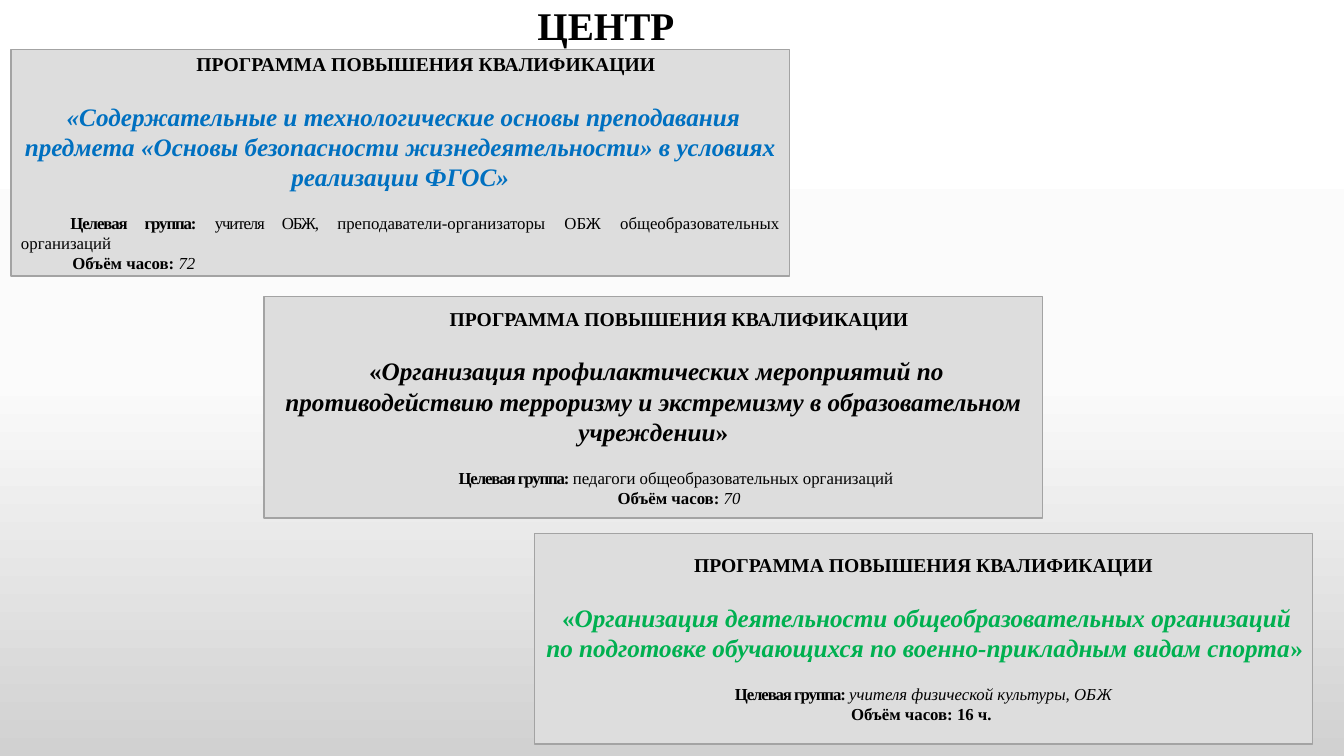
from copy import deepcopy

from pptx import Presentation
from pptx.dml.color import RGBColor
from pptx.enum.shapes import MSO_SHAPE
from pptx.enum.text import MSO_ANCHOR, PP_ALIGN
from pptx.oxml.ns import qn
from pptx.util import Inches, Pt

LEFT, MID, JUST = PP_ALIGN.LEFT, PP_ALIGN.CENTER, PP_ALIGN.JUSTIFY
BOLD = dict(bold=True)
ITALIC = dict(italic=True)
BOTH = dict(bold=True, italic=True)
PLAIN = dict(bold=False)


def color(text):
    return RGBColor.from_string(text)


def add_run(para, text, size, style, hue="000000", track=0):
    """Add a run; track is the letter spacing in points."""
    run = para.add_run()
    run.text = text
    run.font.color.rgb = color(hue)
    for name, value in dict(name="Times New Roman", size=Pt(size), **style).items():
        setattr(run.font, name, value)
    if track:
        run.font._element.set("spc", str(int(track * 100)))


prs = Presentation()
prs.slide_width, prs.slide_height = Inches(13.33), Inches(7.5)
slide = prs.slides.add_slide(prs.slide_layouts[5])

# Background
fill = slide.background.fill
fill.gradient()
fill.gradient_angle = 270
stops = slide.element.find(".//" + qn("a:gsLst"))
stops.append(deepcopy(stops[0]))
shades = [(0, "FFFFFF"), (0.5, "FBFBFB"), (1, "D1D1D1")]
for stop, (place, hue) in zip(fill.gradient_stops, shades):
    stop.position = place
    stop.color.rgb = color(hue)

# Title
title = slide.shapes.title
spot = dict(left=4.68, top=0, width=2.66, height=0.56)
for name, value in spot.items():
    setattr(title, name, Inches(value))
title.text_frame.vertical_anchor = MSO_ANCHOR.MIDDLE
para = title.text_frame.paragraphs[0]
para.alignment, para.line_spacing = MID, 0.9
add_run(para, "ЦЕНТР", 28, BOLD)

# Programme cards: place, colour, course runs, audience runs, hours runs,
# alignment of the last two lines, (margin, indent) of each line
GROUP = ("Целевая группа: ", 12, BOLD, -0.8)
HOURS = ("Объём часов:", 12, BOLD, 0)
SHIFT = [(0.02, 0.49), (0, 0), (0, 0.49), (0.02, 0.49)]
cards = [
    ((2.62, 2.94, 2.2), "000000",
     [(" «", BOLD),
      ("Организация профилактических мероприятий по противодействию терроризму "
       "и экстремизму в образовательном учреждении", BOTH),
      ("»", BOLD)],
     [GROUP, ("педагоги", 12, PLAIN, 0), (" ", 11, PLAIN, 0),
      ("общеобразовательных организаций ", 12, PLAIN, 0)],
     [HOURS, (" 70", 12, ITALIC, 0)], (MID, MID), SHIFT),
    ((5.3, 5.29, 2.09), "00B050",
     [(" «", BOLD),
      ("Организация деятельности общеобразовательных организаций по подготовке "
       "обучающихся по военно-прикладным видам спорта", BOTH),
      ("»", BOLD)],
     [GROUP, ("учителя физической культуры, ОБЖ", 12, ITALIC, 0)],
     [("Объём часов: 16 ч. ", 12, BOLD, 0)], (MID, MID), [(0.02, -0.02)] * 4),
    ((0.11, 0.49, 2.25), "0070C0",
     [(" ", BOLD),
      ("«Содержательные и технологические основы преподавания предмета «Основы "
       "безопасности жизнедеятельности» в условиях реализации ФГОС»", BOTH)],
     [GROUP, ("учителя ОБЖ, ", 12, PLAIN, -0.8),
      ("преподаватели-организаторы ОБЖ", 12, PLAIN, 0), (" ", 11, PLAIN, 0),
      ("общеобразовательных организаций ", 12, PLAIN, 0)],
     [HOURS, (" 72", 12, ITALIC, 0)], (JUST, LEFT), SHIFT),
]

for (left, top, height), hue, course, group, hours, ends, shifts in cards:
    card = slide.shapes.add_shape(MSO_SHAPE.RECTANGLE, Inches(left), Inches(top),
                                  Inches(7.72), Inches(height))
    card.shadow.inherit = False
    card.fill.solid()
    card.fill.fore_color.rgb = color("DDDDDD")
    card.line.color.rgb = color("A3A3A3")
    card.line.width = Pt(1)
    frame = card.text_frame
    frame.word_wrap = True
    frame.vertical_anchor = MSO_ANCHOR.MIDDLE
    head = [("ПРОГРАММА ПОВЫШЕНИЯ КВАЛИФИКАЦИИ", 14, BOLD, 0)]
    name = [(text, 18, style, 0) for text, style in course]
    lines = zip([head, name, group, hours], (MID, MID, *ends), shifts,
                ("000000", hue, "000000", "000000"), (0, 18, 15, 0))
    for row, (runs, align, (margin, indent), tint, gap) in enumerate(lines):
        para = frame.add_paragraph() if row else frame.paragraphs[0]
        para.alignment = align
        para.space_before = Pt(gap)
        props = para._p.get_or_add_pPr()
        props.set("marL", str(Inches(margin)))
        props.set("indent", str(Inches(indent)))
        for text, size, style, track in runs:
            add_run(para, text, size, style, tint, track)

prs.save("out.pptx")
